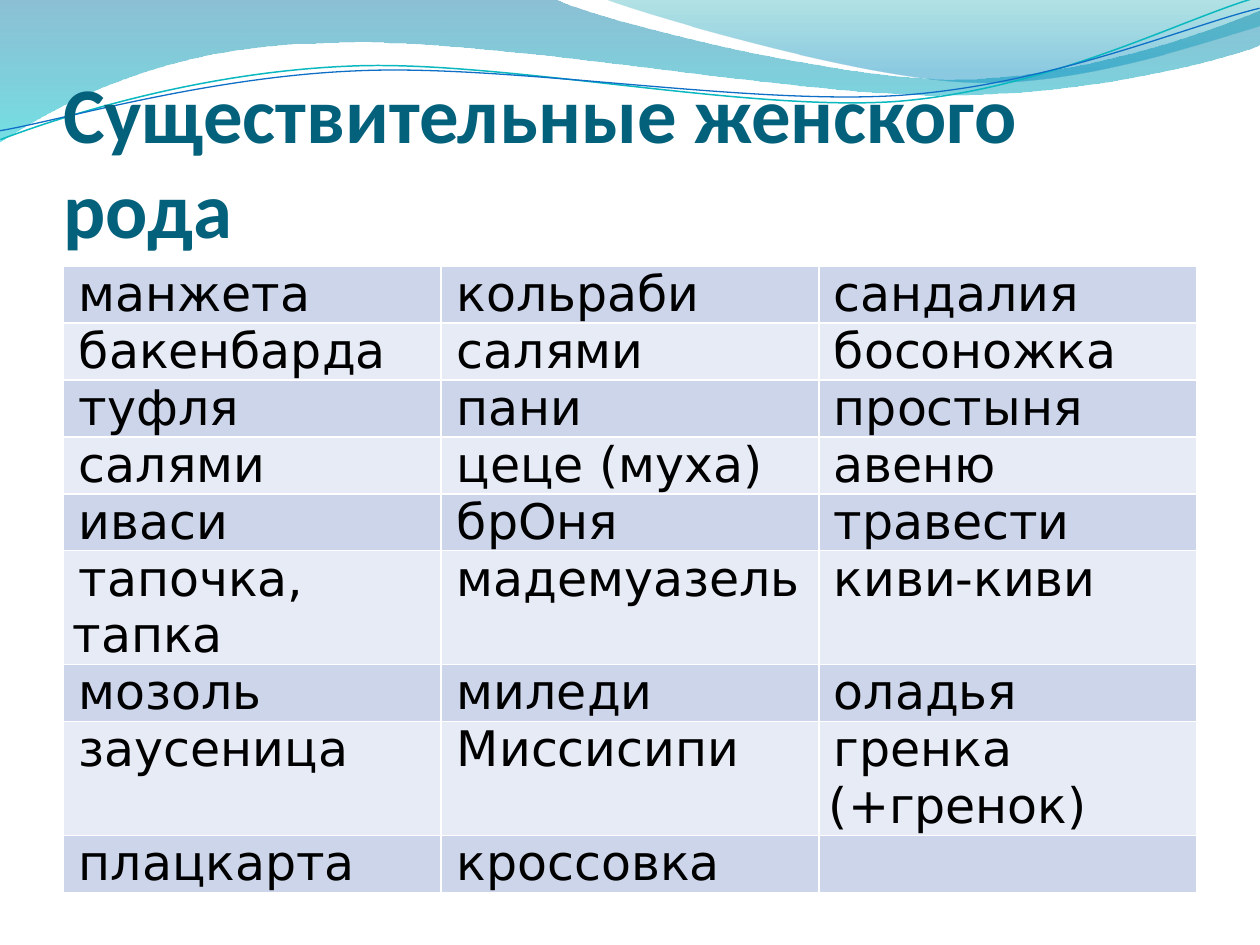
"""Build a slide with a table of feminine nouns under a wave header."""
from lxml import etree
from pptx import Presentation
from pptx.dml.color import RGBColor
from pptx.enum.text import MSO_ANCHOR, MSO_AUTO_SIZE, PP_ALIGN
from pptx.oxml.ns import qn
from pptx.util import Emu, Pt

BOTTOM, NO_FIT = MSO_ANCHOR.BOTTOM, MSO_AUTO_SIZE.NONE
LEFT, JUSTIFY = PP_ALIGN.LEFT, PP_ALIGN.JUSTIFY
SCALE = 914400 / 126
COLUMN_INDENTS = 6, 6, 5
LINE_ROTATION = 357.3

WHITE = RGBColor(0xFF, 0xFF, 0xFF)
BLACK = RGBColor(0, 0, 0)
TITLE = RGBColor(0x04, 0x61, 0x7B)
BANDS = RGBColor(0xCC, 0xD5, 0xEA), RGBColor(0xE7, 0xEB, 0xF5)
DEEP_BLUE = RGBColor(0x00, 0x74, 0xA1)
AQUA = RGBColor(0x00, 0xC6, 0xCF)
TEAL = RGBColor(0x00, 0xA1, 0xA9)
BLUE = RGBColor(0x00, 0x8B, 0xBF)
TEAL_LINE = RGBColor(0x0A, 0xB8, 0xBF)
BLUE_LINE = RGBColor(0x0F, 0x6F, 0xC6)

LEFT_WAVE = [
    [(0, 0)], [(554, -1)],
    [(600, 21), (837, 79), (955, 79)], [(1074, 79), (1207, 33), (1260, 11)],
    [(1261, 45)],
    [(1239, 55), (1096, 96), (940, 95)], [(784, 95), (481, 35), (324, 43)],
    [(163, 45), (58, 105), (-1, 142)], [(0, 0)],
]
RIGHT_WAVE = [
    [(604, -1)],
    [(641, 14), (859, 78), (969, 82)], [(1079, 87), (1211, 40), (1260, 26)],
    [(1260, 0)], [(604, -1)],
]
UPPER_LINE = [
    [(-2, 110)],
    [(59, 90), (199, 52), (350, 53)], [(499, 53), (745, 118), (896, 114)],
    [(1049, 109), (1184, 45), (1260, 27)],
]
LOWER_LINE = [
    [(-2, 101)],
    [(57, 94), (207, 57), (357, 58)], [(509, 58), (750, 112), (902, 108)],
    [(1052, 104), (1189, 52), (1262, 38)],
]
NOUNS = [
    ("манжета", "кольраби", "сандалия"),
    ("бакенбарда", "салями", "босоножка"),
    ("туфля", "пани", "простыня"),
    ("салями", "цеце (муха)", "авеню"),
    ("иваси", "брОня", "травести"),
    ("тапочка, тапка", "мадемуазель", "киви-киви"),
    ("мозоль", "миледи", "оладья"),
    ("заусеница", "Миссисипи", "гренка (+гренок)"),
    ("плацкарта", "кроссовка", ""),
]


def px(n):
    """Turn px into EMU."""
    return Emu(round(n * SCALE))


def add_outline(s, segments, close):
    """Add a freeform whose three-point segments are cubic curves."""
    points = [(px(x), px(y)) for segment in segments for x, y in segment]
    builder = s.shapes.build_freeform(*points[0])
    builder.add_line_segments(points[1:], close=close)
    sp = builder.convert_to_shape()
    sp.shadow.inherit = False
    lines = iter(list(sp._element.iter(qn("a:lnTo"))))
    for segment in segments[1:]:
        line = next(lines)
        if len(segment) == 3:
            line.addprevious(curve := etree.Element(qn("a:cubicBezTo")))
            for part in (line, next(lines), next(lines)):
                curve.append(part[0])
                part.getparent().remove(part)
    return sp


def add_wave(s, segments, stops):
    """Add a translucent wave with a gradient from top to bottom."""
    sp = add_outline(s, segments, True)
    sp.line.fill.background()
    sp.fill.gradient()
    sp.fill.gradient_angle = 270
    for stop, (position, color, _) in zip(sp.fill.gradient_stops, stops):
        stop.position = position
        stop.color.rgb = color
    colors = list(sp._element.spPr.iter(qn("a:srgbClr")))
    for color, (_, _, opacity) in zip(colors, stops):
        etree.SubElement(color, qn("a:alpha"), val=str(opacity * 1000))


def add_curve(s, segments, color, width):
    """Add an open curved line, slightly rotated."""
    sp = add_outline(s, segments, False)
    sp.rotation = LINE_ROTATION
    sp.fill.background()
    sp.line.color.rgb = color
    sp.line.width = Pt(width)


def write(tf, text, *, font, size, color, bold=False, align=LEFT, indent=0):
    """Write one formatted paragraph into a text frame."""
    p = tf.paragraphs[0]
    p.alignment = align
    if indent:
        pPr = p._p.get_or_add_pPr()
        pPr.set("marL", "0")
        pPr.set("indent", str(px(indent)))
    r = p.add_run()
    r.text = text
    r.font.name = font
    r.font.size = Pt(size)
    r.font.bold = bold
    r.font.color.rgb = color


def add_title(s, text):
    """Place the title in front of the waves."""
    sp = s.shapes.title
    s.shapes._spTree.append(sp._element)
    sp.left, sp.top, sp.width, sp.height = px(63), px(97), px(1134), px(157)
    tf = sp.text_frame
    tf.word_wrap = True
    tf.auto_size = NO_FIT
    tf.vertical_anchor = BOTTOM
    tf.margin_left = tf.margin_right = tf.margin_bottom = 0
    tf.margin_top = px(6)
    write(tf, text, font="Calibri", size=45, color=TITLE, bold=True)


def set_borders(cell):
    """Give a cell white borders on all sides."""
    tcPr = cell._tc.get_or_add_tcPr()
    for i, side in enumerate(("a:lnL", "a:lnR", "a:lnT", "a:lnB")):
        ln = etree.Element(qn(side), w=str(Pt(1)))
        fill = etree.SubElement(ln, qn("a:solidFill"))
        etree.SubElement(fill, qn("a:srgbClr"), val=str(WHITE))
        tcPr.insert(i, ln)


def add_noun_table(s, rows):
    """Add the banded table of nouns."""
    frame = s.shapes.add_table(len(rows), len(rows[0]), px(63), px(266),
                               px(1134), px(646))
    table = frame.table
    table.first_row = False
    for i, words in enumerate(rows):
        table.rows[i].height = px(52)
        for j, word in enumerate(words):
            cell = table.cell(i, j)
            cell.margin_left = cell.margin_right = px(10)
            cell.margin_top = cell.margin_bottom = 0
            cell.fill.solid()
            cell.fill.fore_color.rgb = BANDS[i % 2]
            set_borders(cell)
            if word:
                write(cell.text_frame, word, font="DejaVu Sans", size=28,
                      color=BLACK, align=JUSTIFY, indent=COLUMN_INDENTS[j])
    frame.height = px(646)


def main():
    """Build and save the slide."""
    prs = Presentation()
    prs.slide_width, prs.slide_height = px(1260), px(945)
    s = prs.slides.add_slide(prs.slide_layouts[5])
    add_wave(s, LEFT_WAVE, [(0, DEEP_BLUE, 45), (1, AQUA, 55)])
    add_wave(s, RIGHT_WAVE, [(0, TEAL, 30), (0.8, BLUE, 45)])
    add_curve(s, UPPER_LINE, TEAL_LINE, 0.85)
    add_curve(s, LOWER_LINE, BLUE_LINE, 0.75)
    add_title(s, "Существительные женского рода")
    add_noun_table(s, NOUNS)
    prs.save("out.pptx")


if __name__ == "__main__":
    main()
